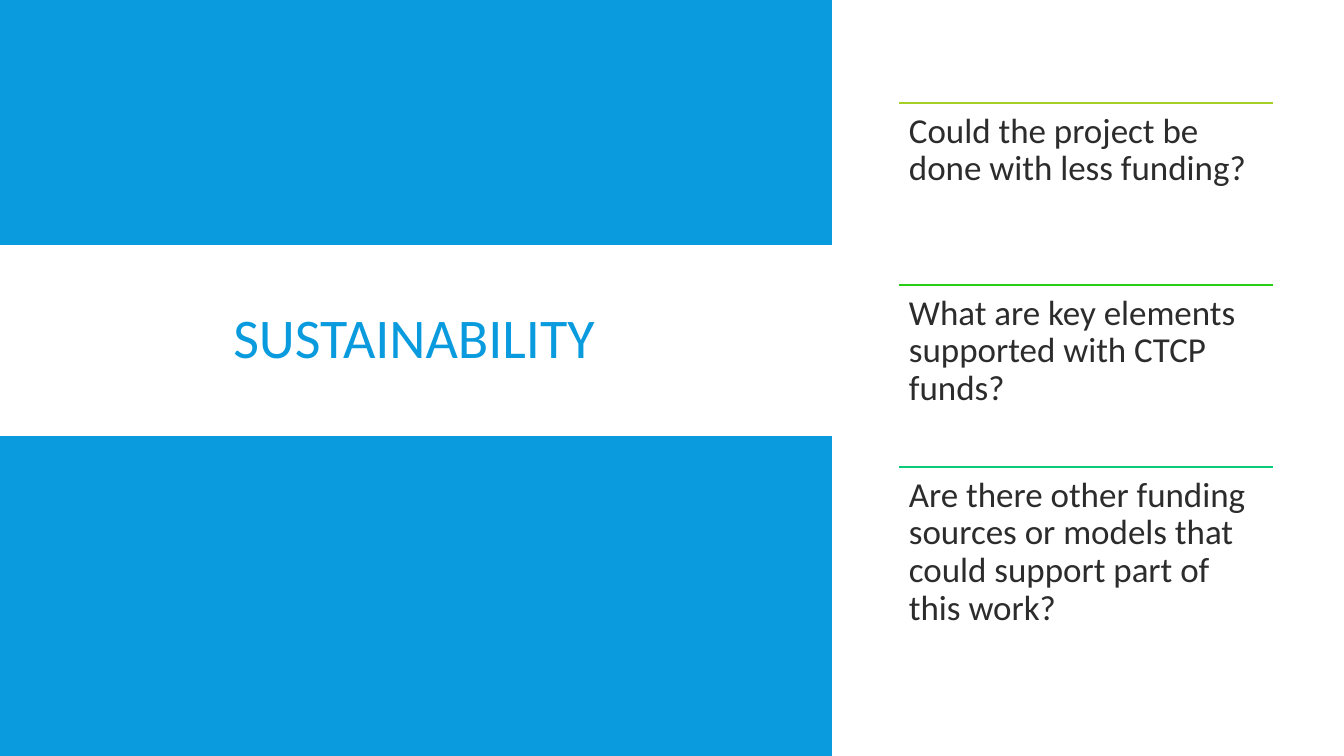
"""Build the sustainability slide: a banded title panel beside three ruled questions."""
import pptx
import pptx.dml.color
import pptx.enum.shapes
import pptx.enum.text
import pptx.oxml
import pptx.util

TITLE = "SUSTAINABILITY"
QUESTIONS = [
    ("Could the project be done with less funding?", "A5D028"),
    ("What are key elements supported with CTCP funds?", "27CF17"),
    ("Are there other funding sources or models that could support part of this work?", "08CC78"),
]
BLUE, WHITE, DARK = "099BDD", "FFFFFF", "2C2C2C"
SLIDE_WIDTH, SLIDE_HEIGHT = 1344, 756
PANELS = [
    ((0, 0, 832, SLIDE_HEIGHT), BLUE),
    ((0, 245, 832, 191), WHITE),
]
TITLE_BOX = (83, 258, 662, 166)
LIST_LEFT, LIST_TOP, LIST_WIDTH, ROW_HEIGHT = 899, 103, 374, 182
INSET = 10
EMU_PER_PX = 12192000 / SLIDE_WIDTH
EMPTY_EFFECTS = '<a:effectLst xmlns:a="http://schemas.openxmlformats.org/drawingml/2006/main"/>'
ALIGN = pptx.enum.text.PP_ALIGN
ANCHOR = pptx.enum.text.MSO_ANCHOR


def px(length):
    return pptx.util.Emu(round(length * EMU_PER_PX))


def color(code):
    return pptx.dml.color.RGBColor.from_string(code)


def apply(target, values):
    for name, value in values.items():
        setattr(target, name, value)


def write(shape, text, size, code, paragraph, anchor):
    frame = shape.text_frame
    margins = ("margin_left", "margin_top", "margin_right", "margin_bottom")
    apply(frame, dict.fromkeys(margins, px(INSET)))
    apply(frame, {"word_wrap": True, "vertical_anchor": anchor,
                  "auto_size": pptx.enum.text.MSO_AUTO_SIZE.NONE})
    para = frame.paragraphs[0]
    apply(para, paragraph)
    span = para.add_run()
    span.text = text
    apply(span.font, {"name": "Calibri", "size": pptx.util.Pt(size), "bold": False})
    span.font.color.rgb = color(code)


def add_panel(page, box, code):
    panel = page.shapes.add_shape(
        pptx.enum.shapes.MSO_SHAPE.RECTANGLE, *map(px, box))
    panel.shadow.inherit = False
    panel.fill.solid()
    panel.fill.fore_color.rgb = color(code)
    panel.line.fill.background()


def place_title(page):
    title = page.shapes.title
    page.shapes._spTree.append(title._element)
    apply(title, dict(zip(("left", "top", "width", "height"), map(px, TITLE_BOX))))
    write(title, TITLE, 40, BLUE,
          {"alignment": ALIGN.CENTER, "line_spacing": 0.85}, ANCHOR.MIDDLE)


def add_question(page, row, text, code):
    top = LIST_TOP + row * ROW_HEIGHT
    rule = page.shapes.add_connector(
        pptx.enum.shapes.MSO_CONNECTOR.STRAIGHT,
        *map(px, (LIST_LEFT, top, LIST_LEFT + LIST_WIDTH, top)))
    apply(rule.line, {"width": pptx.util.Pt(1)})
    rule.line.color.rgb = color(code)
    rule._element.spPr.append(pptx.oxml.parse_xml(EMPTY_EFFECTS))
    box = page.shapes.add_textbox(*map(px, (LIST_LEFT, top, LIST_WIDTH, ROW_HEIGHT)))
    write(box, text, 25, DARK,
          {"alignment": ALIGN.LEFT, "line_spacing": 0.9}, ANCHOR.TOP)


def main():
    deck = pptx.Presentation()
    apply(deck, {"slide_width": px(SLIDE_WIDTH), "slide_height": px(SLIDE_HEIGHT)})
    page = deck.slides.add_slide(deck.slide_layouts.get_by_name("Title Only"))
    for box, code in PANELS:
        add_panel(page, box, code)
    place_title(page)
    for row, (text, code) in enumerate(QUESTIONS):
        add_question(page, row, text, code)
    deck.save("out.pptx")


if __name__ == "__main__":
    main()
